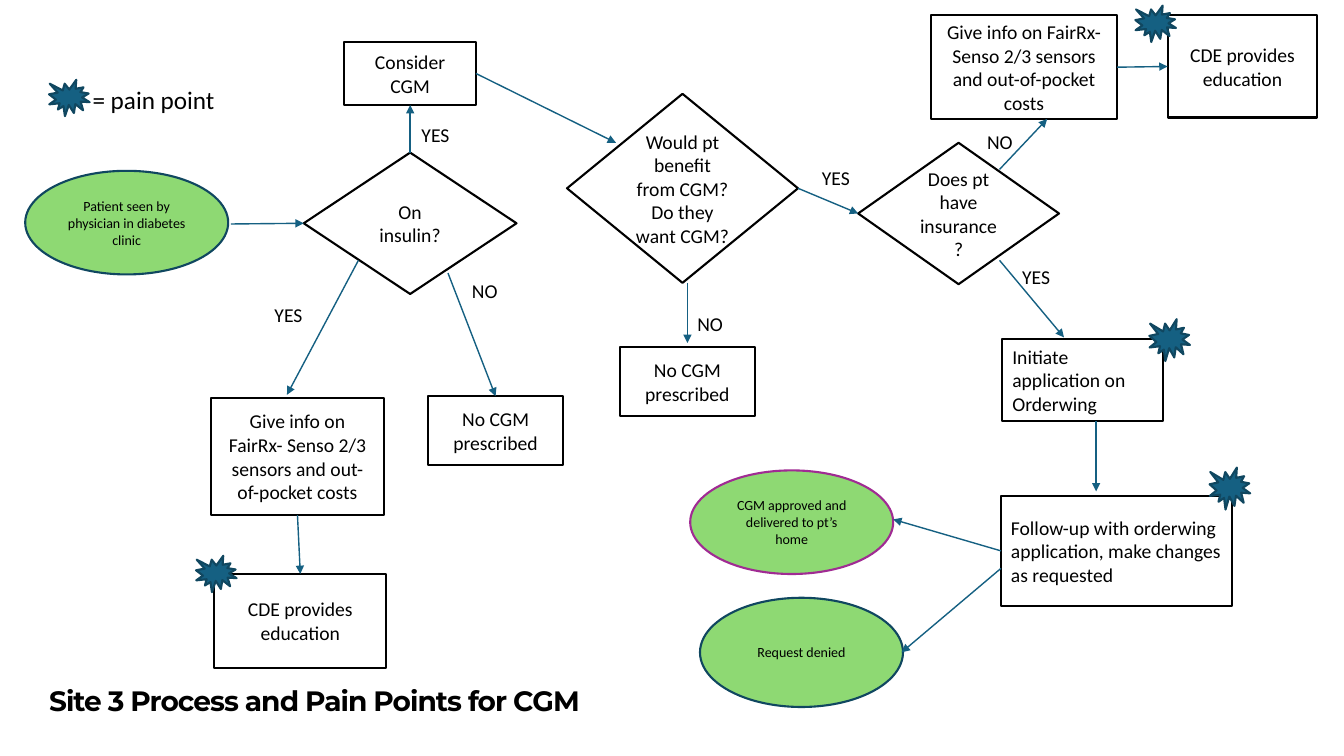
from pptx import Presentation
from pptx.dml.color import RGBColor
from pptx.enum.shapes import MSO_CONNECTOR as CONN, MSO_SHAPE as SHAPE
from pptx.enum.text import MSO_ANCHOR as ANCHOR, PP_ALIGN as ALIGN
from pptx.oxml.ns import qn
from pptx.util import Pt
from lxml import etree

BLACK, WHITE, TEAL, NAVY = "000000", "FFFFFF", "156082", "104760"
GREEN, PURPLE = "8ED973", "A02B93"
TOP, LEFT, BOTTOM, RIGHT = range(4)  # connection sites of boxes and diamonds
NO_CGM = "No CGM prescribed"
GIVE_INFO = "Give info on FairRx- Senso 2/3 sensors and out-of-pocket costs"
EDUCATION = "CDE provides education"


def rgb(color):
    return RGBColor.from_string(color)


def offset(box, x, y):
    return box[0] + x, box[1] + y


def write(tf, text, size, align=ALIGN.LEFT, font="Calibri", bold=False):
    tf.word_wrap = True
    tf.text = text
    for p in tf.paragraphs:
        p.alignment = align
        for r in p.runs:
            r.font.name, r.font.size, r.font.bold = font, Pt(size), bold
            r.font.color.rgb = rgb(BLACK)


def add_node(s, kind, pos, size, text="", fill=WHITE, line=BLACK, pt=14,
             align=ALIGN.CENTER):
    sp = s.shapes.add_shape(kind, *map(Pt, (*pos, *size)))
    sp.shadow.inherit = False
    sp.fill.solid()
    sp.fill.fore_color.rgb = rgb(fill)
    sp.line.color.rgb = rgb(line)
    sp.line.width = Pt(1.5)
    if text:
        sp.text_frame.vertical_anchor = ANCHOR.MIDDLE
        write(sp.text_frame, text, pt, align)
    return sp


def add_step(s, pos, size, text, align=ALIGN.CENTER):
    return add_node(s, SHAPE.RECTANGLE, pos, size, text, align=align)


def add_decision(s, pos, size, text):
    return add_node(s, SHAPE.DIAMOND, pos, size, text)


def add_terminal(s, pos, text, height=74, line=NAVY):
    return add_node(s, SHAPE.OVAL, pos, (145, height), text, GREEN, line, 10)


def add_pain_point(s, pos, height=26):
    return add_node(s, SHAPE.EXPLOSION1, pos, (29, height), fill=TEAL, line=NAVY)


def add_text(s, pos, size, text, pt=14, **style):
    tb = s.shapes.add_textbox(*map(Pt, (*pos, *size)))
    write(tb.text_frame, text, pt, **style)
    return tb


def add_answer(s, pos, text):
    return add_text(s, pos, (47 if text == "YES" else 36, 24), text)


def add_arrow(s, start, end):
    """Join two ends, each an (x, y) point or a (shape, site) pair."""
    ends = [(0, 0) if hasattr(e[0], "shape_id") else e for e in (start, end)]
    cxn = s.shapes.add_connector(CONN.STRAIGHT, *map(Pt, (*ends[0], *ends[1])))
    if hasattr(start[0], "shape_id"):
        cxn.begin_connect(*start)
    if hasattr(end[0], "shape_id"):
        cxn.end_connect(*end)
    cxn.line.color.rgb = rgb(TEAL)
    cxn.line.width = Pt(1)
    etree.SubElement(cxn.line._get_or_add_ln(), qn("a:tailEnd"), type="triangle")
    etree.SubElement(cxn._element.spPr, qn("a:effectLst"))


def add_insulin_branch(s, box):
    """Draw the first decision and return the step that leads on from it."""
    def at(x, y):
        return offset(box, x, y)

    add_terminal(s, at(0, 92), "Patient seen by physician in diabetes clinic")
    insulin = add_decision(s, at(199, 79), (152, 101), "On insulin?")
    consider = add_step(s, at(228, 0), (94, 45), "Consider CGM")
    no_cgm = add_step(s, at(288, 253), (96, 49), NO_CGM)
    info = add_step(s, at(133, 254), (123, 84), GIVE_INFO)
    education = add_step(s, at(135, 380), (123, 67), EDUCATION)
    add_arrow(s, at(147, 130), (insulin, LEFT))
    add_arrow(s, (insulin, TOP), (consider, BOTTOM))
    add_arrow(s, at(302, 165), (no_cgm, TOP))
    add_arrow(s, at(238, 156), at(187, 252))
    add_arrow(s, (info, BOTTOM), (education, TOP))
    add_answer(s, at(276, 54), "YES")
    add_answer(s, at(312, 166), "NO")
    add_answer(s, at(171, 183), "YES")
    add_pain_point(s, at(122, 367))
    return consider


def add_benefit_branch(s, box, source):
    def at(x, y):
        return offset(box, x, y)

    benefit = add_decision(s, at(0, 0), (165, 135),
                           "Would pt benefit from CGM?\nDo they want CGM?")
    add_step(s, at(38, 181), (96, 49), NO_CGM)
    add_arrow(s, (source, RIGHT), at(35, 35))
    add_arrow(s, at(86, 135), at(86, 178))
    add_answer(s, at(86, 152), "NO")
    add_answer(s, at(175, 48), "YES")
    return benefit


def add_insurance_branch(s, box, source):
    def at(x, y):
        return offset(box, x, y)

    insurance = add_decision(s, at(0, 91), (143.5, 101), "Does pt have insurance?")
    info = add_step(s, at(52, 0), (133, 74), GIVE_INFO)
    education = add_step(s, at(221, 0), (107, 73), EDUCATION)
    add_arrow(s, (source, RIGHT), (insurance, LEFT))
    add_arrow(s, at(101, 110), at(135, 74))
    add_arrow(s, (info, RIGHT), (education, LEFT))
    add_arrow(s, at(101, 175), at(147, 230))
    add_answer(s, at(85, 78), "NO")
    add_answer(s, at(110, 175), "YES")
    add_pain_point(s, at(198, -7))


def add_application_branch(s, box):
    def at(x, y):
        return offset(box, x, y)

    add_step(s, at(223, 14), (115, 59), "Initiate application on Orderwing", ALIGN.LEFT)
    follow_up = add_step(
        s, at(222, 126), (165, 79),
        "Follow-up with orderwing application, make changes as requested", ALIGN.LEFT)
    add_terminal(s, at(0, 108), "CGM approved and delivered to pt’s home", line=PURPLE)
    add_terminal(s, at(7, 199), "Request denied", height=78)
    add_arrow(s, at(290, 73), at(290, 123))
    add_arrow(s, (follow_up, LEFT), at(145, 143))
    add_arrow(s, at(222, 178), at(151, 238))
    add_pain_point(s, at(328, 0), 30)
    add_pain_point(s, at(371, 106), 30)


def add_legend(s, box):
    add_pain_point(s, box)
    add_text(s, offset(box, 24, 0), (110, 29), "= pain point", 18)


def add_title(s, box):
    tb = add_text(s, box, (480, 32), "Site 3 Process and Pain Points for CGM", 20,
                  font="Montserrat", bold=True)
    tb.text_frame.paragraphs[0].runs[0].font._element.set("spc", "-70")


def main():
    prs = Presentation()
    prs.slide_width, prs.slide_height = Pt(960), Pt(540)
    s = prs.slides.add_slide(prs.slide_layouts[6])
    consider = add_insulin_branch(s, (18, 30))
    benefit = add_benefit_branch(s, (405, 67), consider)
    add_insurance_branch(s, (613, 11), benefit)
    add_application_branch(s, (493, 228))
    add_legend(s, (35, 57))
    add_title(s, (28, 485))
    prs.save("out.pptx")


if __name__ == "__main__":
    main()
